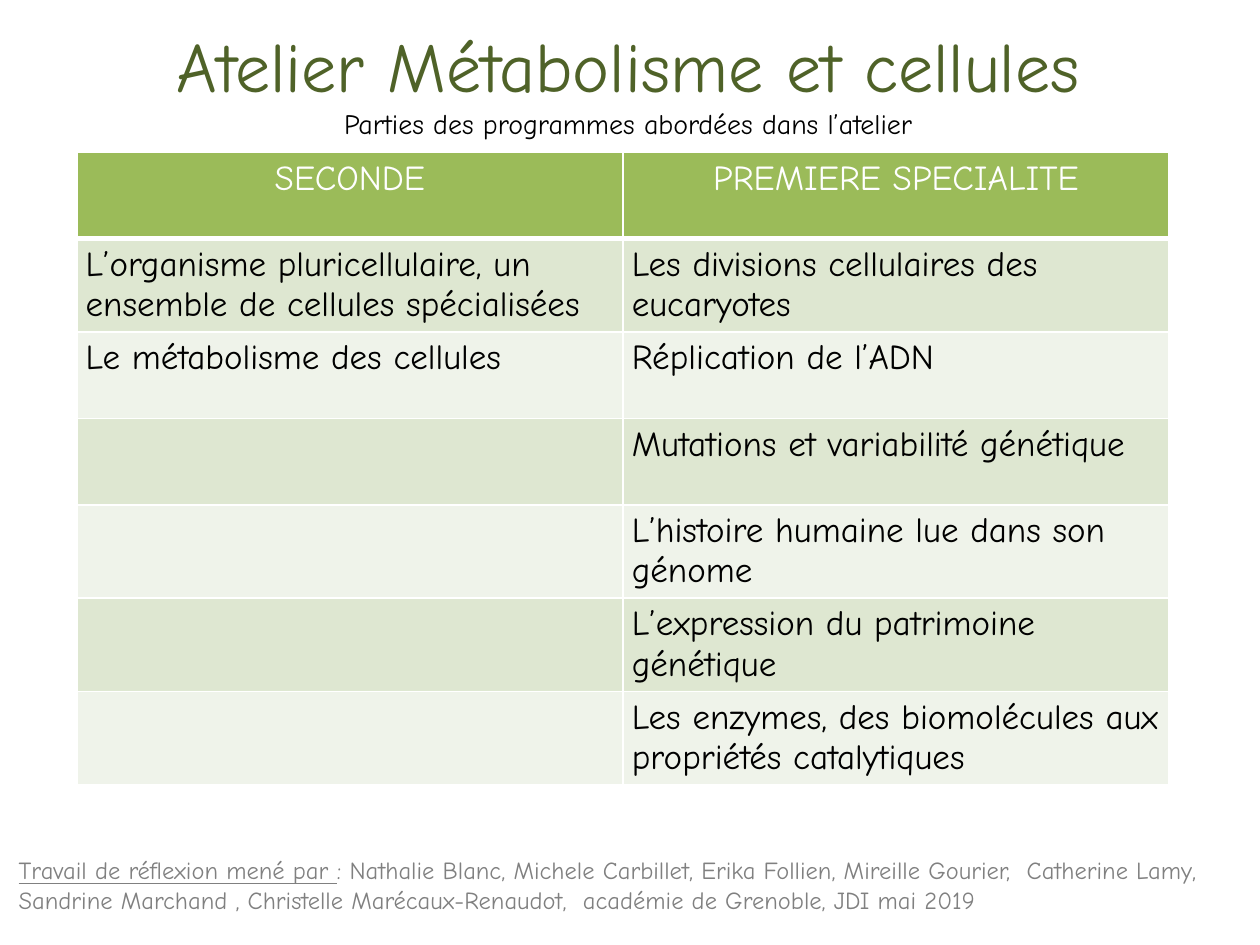
from lxml import etree
from pptx import Presentation
from pptx.dml.color import RGBColor
from pptx.enum.text import MSO_AUTO_SIZE, PP_ALIGN
from pptx.oxml.ns import qn
from pptx.util import Inches, Pt

CENTER = PP_ALIGN.CENTER
LEFT = PP_ALIGN.LEFT
GROW = MSO_AUTO_SIZE.SHAPE_TO_FIT_TEXT
FONT = "Comic Neue"
HEADS = ["SECONDE", "PREMIERE SPECIALITE"]
TOPICS = [
    ["L’organisme pluricellulaire, un ensemble de cellules spécialisées",
     "Les divisions cellulaires des eucaryotes"],
    ["Le métabolisme des cellules", "Réplication de l’ADN"],
    ["", "Mutations et variabilité génétique"],
    ["", "L’histoire humaine lue dans son génome"],
    ["", "L’expression du patrimoine génétique"],
    ["", "Les enzymes, des biomolécules aux propriétés catalytiques"],
]
CREDIT = "Travail de réflexion mené par "
NAMES = (": Nathalie Blanc, Michele Carbillet, Erika Follien, Mireille Gourier,  "
         "Catherine Lamy, Sandrine Marchand , Christelle Marécaux-Renaudot,  "
         "académie de Grenoble, JDI mai 2019")


def color(code):
    return RGBColor.from_string(code)


def style(run, size, code):
    run.font.name = FONT
    run.font.size = Pt(size)
    run.font.color.rgb = color(code)


def add_text(slide, box, wrap):
    frame = slide.shapes.add_textbox(*map(Inches, box)).text_frame
    frame.word_wrap = wrap
    frame.auto_size = GROW
    return frame


def add_title(slide, box):
    frame = add_text(slide, box, False)
    frame.text = ("Atelier Métabolisme et cellules\n"
                  "Parties des programmes abordées dans l’atelier")
    for para, size, code in zip(frame.paragraphs, (40, 16), ("4F6228", "000000")):
        para.alignment = CENTER
        style(para.runs[0], size, code)


def add_border(cell, base):
    props = cell._tc.get_or_add_tcPr()
    for side, width in (("L", 1), ("R", 1), ("T", 1), ("B", base)):
        line = etree.SubElement(props, qn(f"a:ln{side}"), w=str(Pt(width)))
        fill = etree.SubElement(line, qn("a:solidFill"))
        etree.SubElement(fill, qn("a:srgbClr"), val="FFFFFF")


def fill_cell(cell, text, fill, code, align, base):
    cell.margin_left = cell.margin_right = Inches(0.07)
    cell.margin_top = cell.margin_bottom = Inches(0.05)
    add_border(cell, base)
    cell.fill.solid()
    cell.fill.fore_color.rgb = color(fill)
    if text:
        para = cell.text_frame.paragraphs[0]
        para.text = text
        para.alignment = align
        style(para.runs[0], 20, code)


def add_topics(slide, box):
    rows = [HEADS] + TOPICS
    table = slide.shapes.add_table(len(rows), len(HEADS), *map(Inches, box)).table
    for i, row in enumerate(rows):
        if i == 0:
            look = ("9BBB59", "FFFFFF", CENTER, 3)
        else:
            look = ("DEE7D1" if i % 2 else "EFF3EA", "000000", LEFT, 1)
        for j, text in enumerate(row):
            fill_cell(table.cell(i, j), text, *look)


def add_credit(slide, box):
    para = add_text(slide, box, True).paragraphs[0]
    for text, under in ((CREDIT, True), (NAMES, False)):
        run = para.add_run()
        run.text = text
        style(run, 14, "808080")
        run.font.underline = under


def main():
    deck = Presentation()
    deck.slide_width = Inches(10)
    deck.slide_height = Inches(7.5)
    slide = deck.slides.add_slide(deck.slide_layouts[6])
    add_topics(slide, (0.61, 1.21, 8.67, 4.8))
    add_title(slide, (0.79, 0.13, 8.39, 1.04))
    add_credit(slide, (0.05, 6.74, 9.88, 0.57))
    deck.save("out.pptx")


if __name__ == "__main__":
    main()
